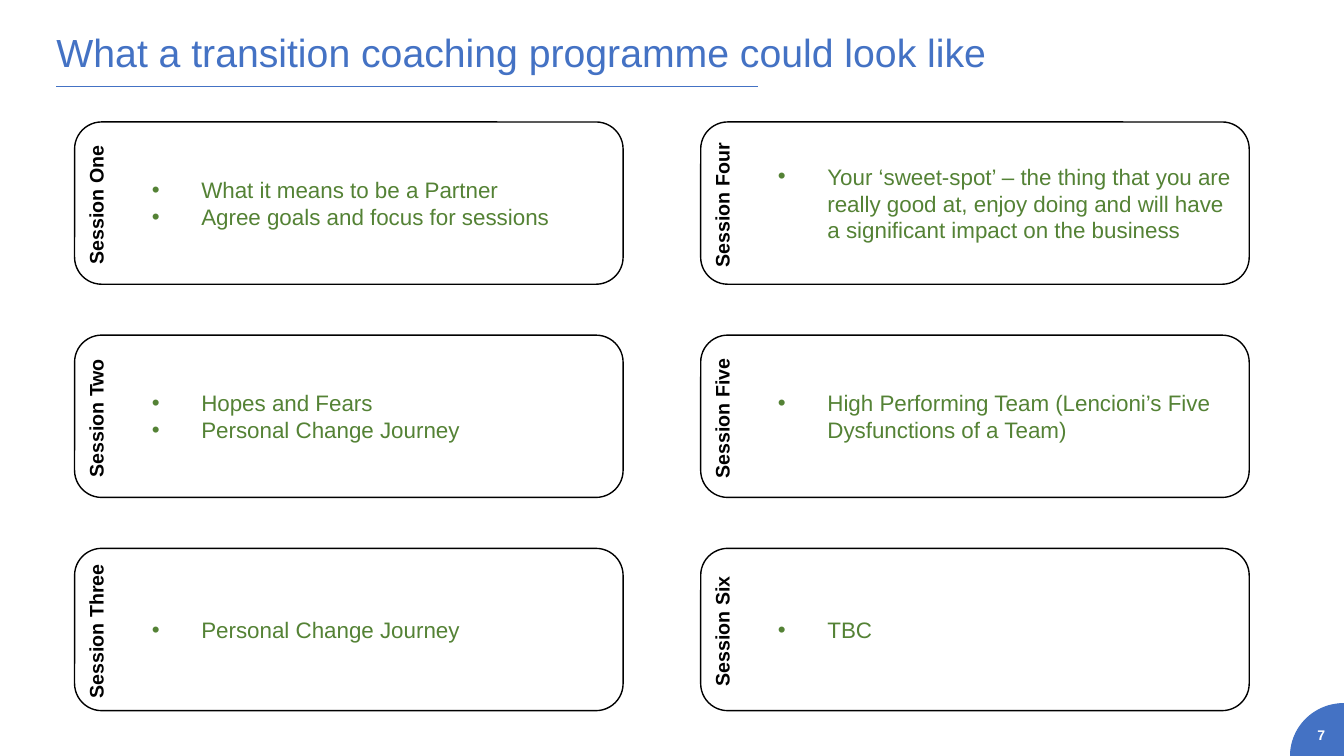
from dataclasses import dataclass
from math import cos, pi, sin

from lxml.etree import SubElement
from pptx import Presentation
from pptx.dml.color import RGBColor
from pptx.enum.shapes import MSO_CONNECTOR, MSO_SHAPE
from pptx.enum.text import MSO_ANCHOR, PP_ALIGN
from pptx.oxml.ns import qn
from pptx.util import Inches, Pt


@dataclass(frozen=True)
class Theme:
    font: str = "Arial"
    accent: str = "4472C4"
    body: str = "548235"
    dark: str = "000000"
    light: str = "FFFFFF"
    title_size: int = 28
    body_size: int = 16
    label_size: int = 14
    number_size: int = 10


THEME = Theme()
SLIDE_WIDTH, SLIDE_HEIGHT = 13.33, 7.5
COLUMNS, ROWS = 2, 3
CARD_WIDTH, CARD_HEIGHT = 5.44, 1.61
GRID_BOX = (0.74, 1.21, 11.65, 5.84)
TITLE_BOX = (0.56, 0.33, 10.28, 0.47)
CORNER_BOX = (12.8, 6.98, 0.53, 0.52)

# Sessions run down the first column, then down the second
SESSIONS = [
    ("Session One", ["What it means to be a Partner", "Agree goals and focus for sessions"]),
    ("Session Two", ["Hopes and Fears", "Personal Change Journey"]),
    ("Session Three", ["Personal Change Journey"]),
    ("Session Four", ["Your ‘sweet-spot’ – the thing that you are really good at, "
                      "enjoy doing and will have a significant impact on the business"]),
    ("Session Five", ["High Performing Team (Lencioni’s Five Dysfunctions of a Team)"]),
    ("Session Six", ["TBC"]),
]


def to_inches(box):
    return [Inches(length) for length in box]


def color(value):
    return RGBColor.from_string(value)


def style(paragraph, size, text_color, bold=False, align=PP_ALIGN.LEFT):
    paragraph.alignment = align
    for run in paragraph.runs:
        run.font.name = THEME.font
        run.font.size = Pt(size)
        run.font.bold = bold
        run.font.color.rgb = color(text_color)


def add_bullet(paragraph):
    properties = paragraph._p.get_or_add_pPr()
    properties.set("marL", str(Inches(1.08)))
    properties.set("indent", str(Inches(-0.49)))
    SubElement(properties, qn("a:buFont"), typeface=THEME.font)
    SubElement(properties, qn("a:buChar"), char="•")


def add_plain_text(slide, box, text, anchor):
    text_frame = slide.shapes.add_textbox(*to_inches(box)).text_frame
    text_frame.word_wrap = True
    text_frame.vertical_anchor = anchor
    text_frame.margin_left = text_frame.margin_right = 0
    text_frame.margin_top = text_frame.margin_bottom = 0
    text_frame.text = text
    return text_frame.paragraphs[0]


def add_title(slide, box, text):
    left, top, _, height = box
    paragraph = add_plain_text(slide, box, text, MSO_ANCHOR.TOP)
    paragraph.line_spacing = 0.9
    style(paragraph, THEME.title_size, THEME.accent)

    # Rule under the title
    rule_y = top + height + 0.06
    rule = slide.shapes.add_connector(
        MSO_CONNECTOR.STRAIGHT, *to_inches((left, rule_y, left + 6.96, rule_y)))
    rule.line.color.rgb = color(THEME.accent)
    rule.line.width = Pt(0.5)
    SubElement(rule._element.spPr, qn("a:effectLst"))


def add_page_corner(slide, box, number):
    left, top, width, height = box
    right, bottom = left + width, top + height

    # Quarter disc around the bottom right corner
    steps = 32
    angles = [pi / 2 * step / steps for step in range(steps + 1)]
    arc = [(Inches(right - width * sin(angle)), Inches(bottom - height * cos(angle)))
           for angle in angles]
    builder = slide.shapes.build_freeform(*arc[0])
    builder.add_line_segments(arc[1:] + [(Inches(right), Inches(bottom))], close=True)
    disc = builder.convert_to_shape()
    disc.shadow.inherit = False
    disc.fill.solid()
    disc.fill.fore_color.rgb = color(THEME.accent)
    disc.line.color.rgb = color(THEME.accent)
    disc.line.width = Pt(0.75)

    # Page number
    number_box = (left + 0.12, top + 0.16, 0.37, 0.31)
    paragraph = add_plain_text(slide, number_box, number, MSO_ANCHOR.MIDDLE)
    style(paragraph, THEME.number_size, THEME.light, bold=True, align=PP_ALIGN.CENTER)


def add_rounded(group, box, text):
    shape = group.shapes.add_shape(MSO_SHAPE.ROUNDED_RECTANGLE, *to_inches(box))
    shape.shadow.inherit = False
    shape.fill.background()
    text_frame = shape.text_frame
    text_frame.word_wrap = True
    text_frame.vertical_anchor = MSO_ANCHOR.MIDDLE
    text_frame.text = text
    return shape


def add_session_card(slide, box, name, topics):
    left, top, _, height = box
    group = slide.shapes.add_group_shape()

    # Outlined card with its topics
    card = add_rounded(group, box, "\n".join(topics))
    card.line.color.rgb = color(THEME.dark)
    card.line.width = Pt(1)
    for paragraph in card.text_frame.paragraphs:
        add_bullet(paragraph)
        style(paragraph, THEME.body_size, THEME.body)

    # Session name, turned to read upwards along the left edge
    label_width, label_height = 1.57, 0.34
    center_x, center_y = left + 0.21, top + height / 2 + 0.02
    label_box = (center_x - label_width / 2, center_y - label_height / 2,
                 label_width, label_height)
    label = add_rounded(group, label_box, name)
    label.rotation = 270
    label.line.fill.background()
    style(label.text_frame.paragraphs[0], THEME.label_size, THEME.dark,
          bold=True, align=PP_ALIGN.CENTER)


def add_session_grid(slide, box, sessions):
    left, top, width, height = box
    column_step = (width - CARD_WIDTH) / (COLUMNS - 1)
    row_step = (height - CARD_HEIGHT) / (ROWS - 1)
    for index, (name, topics) in enumerate(sessions):
        column, row = divmod(index, ROWS)
        card_box = (left + column * column_step, top + row * row_step,
                    CARD_WIDTH, CARD_HEIGHT)
        add_session_card(slide, card_box, name, topics)


def main():
    presentation = Presentation()
    presentation.slide_width = Inches(SLIDE_WIDTH)
    presentation.slide_height = Inches(SLIDE_HEIGHT)
    slide = presentation.slides.add_slide(presentation.slide_layouts[6])
    add_page_corner(slide, CORNER_BOX, "7")
    add_title(slide, TITLE_BOX, "What a transition coaching programme could look like")
    add_session_grid(slide, GRID_BOX, SESSIONS)
    presentation.save("out.pptx")


if __name__ == "__main__":
    main()
